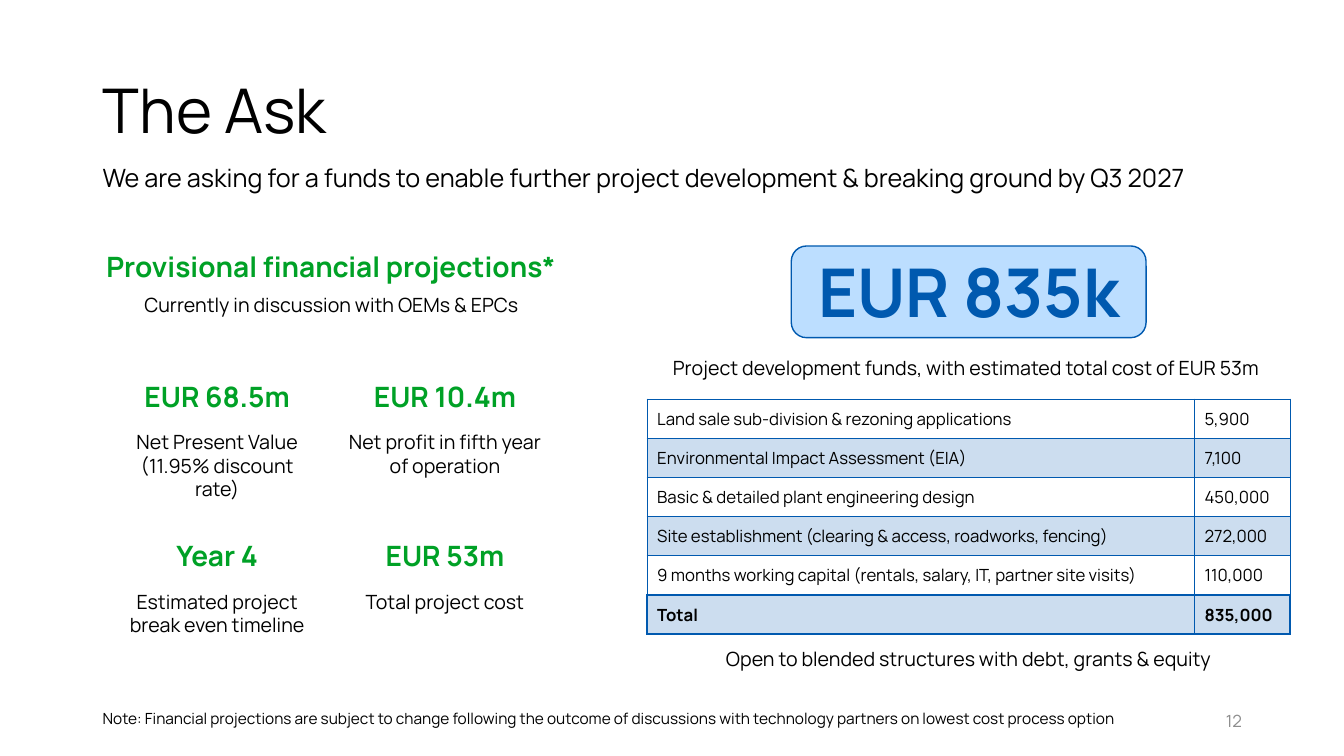
from dataclasses import dataclass
from typing import Any

from lxml import etree
from pptx import Presentation
from pptx.dml.color import RGBColor
from pptx.enum import shapes, text
from pptx.oxml.ns import qn
from pptx.util import Pt

LEFT, MID, RIGHT = text.PP_ALIGN.LEFT, text.PP_ALIGN.CENTER, text.PP_ALIGN.RIGHT


@dataclass(frozen=True)
class Theme:
    face: str = "Manrope"
    black: str = "000000"
    green: str = "00A126"
    blue: str = "0059AF"
    sky: str = "BCDEFF"
    grey: str = "8C8C8C"
    title: float = 44
    badge: float = 48
    head: float = 20
    lead: float = 18
    body: float = 14
    cell: float = 12
    note: float = 11
    thin: float = 1
    thick: float = 1.5


@dataclass(frozen=True)
class Label:
    words: str
    left: float
    top: float
    width: float
    height: float
    size: float
    color: str = "000000"
    bold: bool = False
    align: Any = MID
    middle: bool = False
    line: float = 1
    after: float = 0


@dataclass(frozen=True)
class Metric:
    value: str
    detail: str


@dataclass(frozen=True)
class Cost:
    item: str
    amount: str


T = Theme()

LABELS = [
    Label("We are asking for a funds to enable further project development"
          " & breaking ground by Q3 2027",
          66.24, 112.32, 828, 28.8, T.lead, align=LEFT),
    Label("Provisional financial projections*", 54.72, 162.72, 363.6, 47.52,
          T.head, T.green, True, middle=True, line=1.3, after=10),
    Label("Currently in discussion with OEMs & EPCs", 66.24, 199.44, 341.28, 31.68,
          T.body, middle=True, line=1.3, after=10),
    Label("Project development funds, with estimated total cost of EUR 53m ",
          462.24, 250.56, 458.64, 24.48, T.body),
    Label("Open to blended structures with debt, grants & equity",
          458.64, 458.64, 466.56, 24.48, T.body),
    Label("Note: Financial projections are subject to change following the outcome of"
          " discussions with technology partners on lowest cost process option",
          66.24, 502.56, 763.92, 20.88, T.note, align=LEFT, middle=True),
    Label("12", 678.24, 500.4, 216, 28.8, T.cell, T.grey, align=RIGHT, middle=True),
]

METRICS = [
    Metric("EUR 68.5m", "Net Present Value\n(11.95% discount rate)"),
    Metric("EUR 10.4m", "Net profit in fifth year of operation"),
    Metric("Year 4", "Estimated project break even timeline"),
    Metric("EUR 53m", "Total project cost"),
]

COSTS = [
    Cost("Land sale sub-division & rezoning applications", "5,900"),
    Cost("Environmental Impact Assessment (EIA)", "7,100"),
    Cost("Basic & detailed plant engineering design", "450,000"),
    Cost("Site establishment (clearing & access, roadworks, fencing)", "272,000"),
    Cost("9 months working capital (rentals, salary, IT, partner site visits)", "110,000"),
    Cost("Total", "835,000"),
]


def rgb(code: str) -> RGBColor:
    return RGBColor.from_string(code)


def write(frame: Any, words: str, size: float, color: str = T.black,
          bold: bool = False, align: Any = LEFT) -> None:
    frame.text = words
    for para in frame.paragraphs:
        para.alignment = align
        para.font.name = T.face
        para.font.size = Pt(size)
        para.font.bold = bold
        para.font.color.rgb = rgb(color)


def add_title(slide: Any) -> None:
    title = slide.shapes.title
    title.left, title.top, title.width, title.height = Pt(66.24), Pt(28.8), Pt(828), Pt(104.4)
    frame = title.text_frame
    write(frame, "The Ask", T.title)
    frame.auto_size = text.MSO_AUTO_SIZE.NONE
    frame.vertical_anchor = text.MSO_ANCHOR.MIDDLE
    frame.paragraphs[0].line_spacing = 0.9


def add_label(slide: Any, label: Label) -> None:
    box = slide.shapes.add_textbox(
        Pt(label.left), Pt(label.top), Pt(label.width), Pt(label.height))
    frame = box.text_frame
    frame.word_wrap = True
    frame.vertical_anchor = text.MSO_ANCHOR.MIDDLE if label.middle else text.MSO_ANCHOR.TOP
    write(frame, label.words, label.size, label.color, label.bold, label.align)
    for para in frame.paragraphs:
        para.line_spacing = label.line
        para.space_after = Pt(label.after)


def add_metrics(slide: Any) -> None:
    for i, metric in enumerate(METRICS):
        row, col = divmod(i, 2)
        left, top = 79.2 + 162.72 * col, 267.12 + 113.76 * row
        add_label(slide, Label(metric.value, left, top, 151.92, 31.68,
                               T.head, T.green, True, middle=True))
        add_label(slide, Label(metric.detail, left, top + 36.72, 151.92, 41.04, T.body))


def add_badge(slide: Any) -> None:
    badge = slide.shapes.add_shape(shapes.MSO_SHAPE.ROUNDED_RECTANGLE,
                                   Pt(565.2), Pt(175.68), Pt(253.44), Pt(65.52))
    badge.shadow.inherit = False
    badge.fill.solid()
    badge.fill.fore_color.rgb = rgb(T.sky)
    badge.line.color.rgb = rgb(T.blue)
    badge.line.width = Pt(T.thin)
    frame = badge.text_frame
    frame.margin_top = frame.margin_bottom = 0
    frame.vertical_anchor = text.MSO_ANCHOR.TOP
    write(frame, "EUR 835k", T.badge, T.blue, True, MID)


def add_border(cell: Any, side: str, width: float) -> None:
    props = cell._tc.get_or_add_tcPr()
    line = etree.SubElement(props, qn(f"a:ln{side}"), w=str(Pt(width)))
    fill = etree.SubElement(line, qn("a:solidFill"))
    etree.SubElement(fill, qn("a:srgbClr"), val=T.blue)


def tint(cell: Any) -> None:
    """Fill the cell with blue at 20% opacity."""
    cell.fill.solid()
    cell.fill.fore_color.rgb = rgb(T.blue)
    color = cell._tc.tcPr.find(f"{qn('a:solidFill')}/{qn('a:srgbClr')}")
    etree.SubElement(color, qn("a:alpha"), val="20000")


def add_costs(slide: Any) -> None:
    last = len(COSTS) - 1
    table = slide.shapes.add_table(len(COSTS), 2, Pt(462.24), Pt(285.12),
                                   Pt(459.36), Pt(168)).table
    table.first_row = table.horz_banding = False
    table.columns[0].width, table.columns[1].width = Pt(390.96), Pt(68.4)
    for r, cost in enumerate(COSTS):
        table.rows[r].height = Pt(28)
        total = r == last
        heavy = {"L": total, "R": total, "T": total, "B": r >= last - 1}
        for c, words in enumerate((cost.item, cost.amount)):
            cell = table.cell(r, c)
            cell.vertical_anchor = text.MSO_ANCHOR.MIDDLE
            write(cell.text_frame, words, T.cell, bold=total)
            inner = "R" if c == 0 else "L"
            for side, thick in heavy.items():
                add_border(cell, side, T.thick if thick and side != inner else T.thin)
            if r % 2:
                tint(cell)
            else:
                cell.fill.background()


def main() -> None:
    deck = Presentation()
    deck.slide_width, deck.slide_height = Pt(960), Pt(540)
    slide = deck.slides.add_slide(deck.slide_layouts[5])
    add_title(slide)
    add_badge(slide)
    add_costs(slide)
    add_metrics(slide)
    for label in LABELS:
        add_label(slide, label)
    deck.save("out.pptx")


if __name__ == "__main__":
    main()
